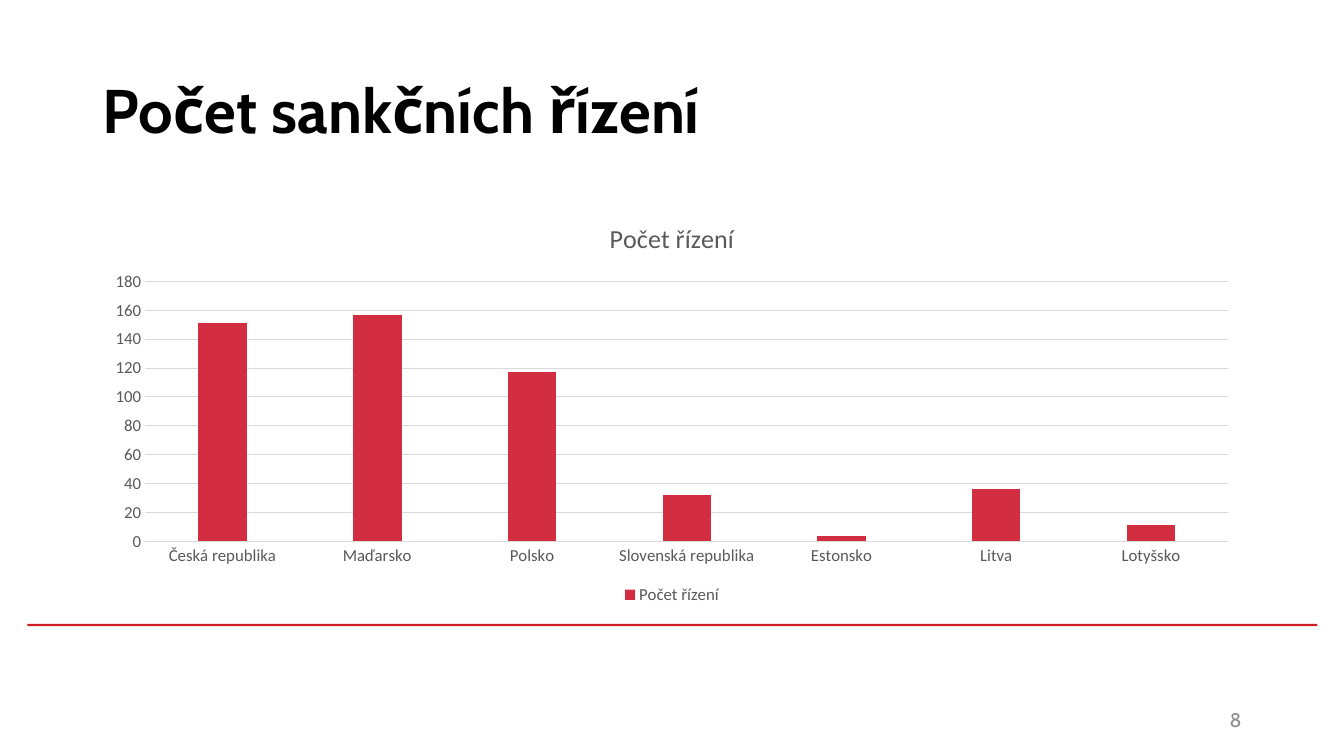
import pptx
import pptx.chart.data
import pptx.dml.color
import pptx.enum.chart
import pptx.enum.shapes
import pptx.enum.text
import pptx.util
from pptx.util import Cm, Pt

COLORS = {
    "title": "000000",
    "rule": "CD1F21",
    "bar": "D22D40",
    "chart text": "595959",
    "grid": "D9D9D9",
    "page number": "8C8C8C",
}
CASES = {
    "Česká republika": 151,
    "Maďarsko": 157,
    "Polsko": 117,
    "Slovenská republika": 32,
    "Estonsko": 4,
    "Litva": 36,
    "Lotyšsko": 11,
}
LEFT, WIDTH = Cm(2.33), Cm(29.21)


def color(name):
    return pptx.dml.color.RGBColor.from_string(COLORS[name])


def add_text(page, place, text, size, color_name, bold, align):
    box = page.shapes.add_textbox(*place)
    frame = box.text_frame
    frame.word_wrap = True
    frame.vertical_anchor = pptx.enum.text.MSO_ANCHOR.MIDDLE
    para = frame.paragraphs[0]
    para.alignment = align
    para.line_spacing = 0.9
    span = para.add_run()
    span.text = text
    span.font.name = "Cabin"
    span.font.size = Pt(size)
    span.font.bold = bold
    span.font.color.rgb = color(color_name)


deck = pptx.Presentation()
deck.slide_width, deck.slide_height = Cm(33.87), Cm(19.05)
page = deck.slides.add_slide(deck.slide_layouts[6])

# Red rule above the footer
rule = page.shapes.add_shape(
    pptx.enum.shapes.MSO_SHAPE.RECTANGLE, Cm(0.69), Cm(15.72), Cm(32.51), Cm(0.06))
rule.shadow.inherit = False
rule.fill.solid()
rule.fill.fore_color.rgb = color("rule")
rule.line.fill.background()

align = pptx.enum.text.PP_ALIGN
add_text(page, (LEFT, Cm(1.02), WIDTH, Cm(3.68)),
         "Počet sankčních řízení", 44, "title", True, align.LEFT)

# Column chart
data = pptx.chart.data.CategoryChartData()
data.categories = list(CASES)
data.add_series("Počet řízení", list(CASES.values()))
chart = page.shapes.add_chart(
    pptx.enum.chart.XL_CHART_TYPE.COLUMN_CLUSTERED,
    LEFT, Cm(5.08), WIDTH, Cm(10.26), data).chart
chart.font.name = "Calibri"
chart.font.size = Pt(12)
chart.font.color.rgb = color("chart text")

chart.has_title = True
heading = chart.chart_title.text_frame.paragraphs[0].add_run()
heading.text = "Počet řízení"
heading.font.name = "Calibri"
heading.font.size = Pt(18.6)
heading.font.bold = False
heading.font.color.rgb = color("chart text")
chart.chart_title.include_in_layout = False

chart.has_legend = True
chart.legend.position = pptx.enum.chart.XL_LEGEND_POSITION.BOTTOM
chart.legend.include_in_layout = False

plot = chart.plots[0]
plot.gap_width = 219
plot.overlap = -27
plot.vary_by_categories = False
bars = plot.series[0]
bars.invert_if_negative = False
bars.format.fill.solid()
bars.format.fill.fore_color.rgb = color("bar")

for axis in (chart.category_axis, chart.value_axis):
    axis.major_tick_mark = pptx.enum.chart.XL_TICK_MARK.NONE
    axis.minor_tick_mark = pptx.enum.chart.XL_TICK_MARK.NONE
chart.value_axis.minimum_scale = 0
chart.value_axis.maximum_scale = 180
chart.value_axis.major_unit = 20
chart.value_axis.has_major_gridlines = True
chart.value_axis.format.line.fill.background()
for line in (chart.category_axis.format.line,
             chart.value_axis.major_gridlines.format.line):
    line.width = Pt(0.75)
    line.color.rgb = color("grid")

add_text(page, (Cm(23.92), Cm(17.66), Cm(7.62), Cm(1.01)),
         "8", 14, "page number", False, align.RIGHT)

deck.save("out.pptx")
